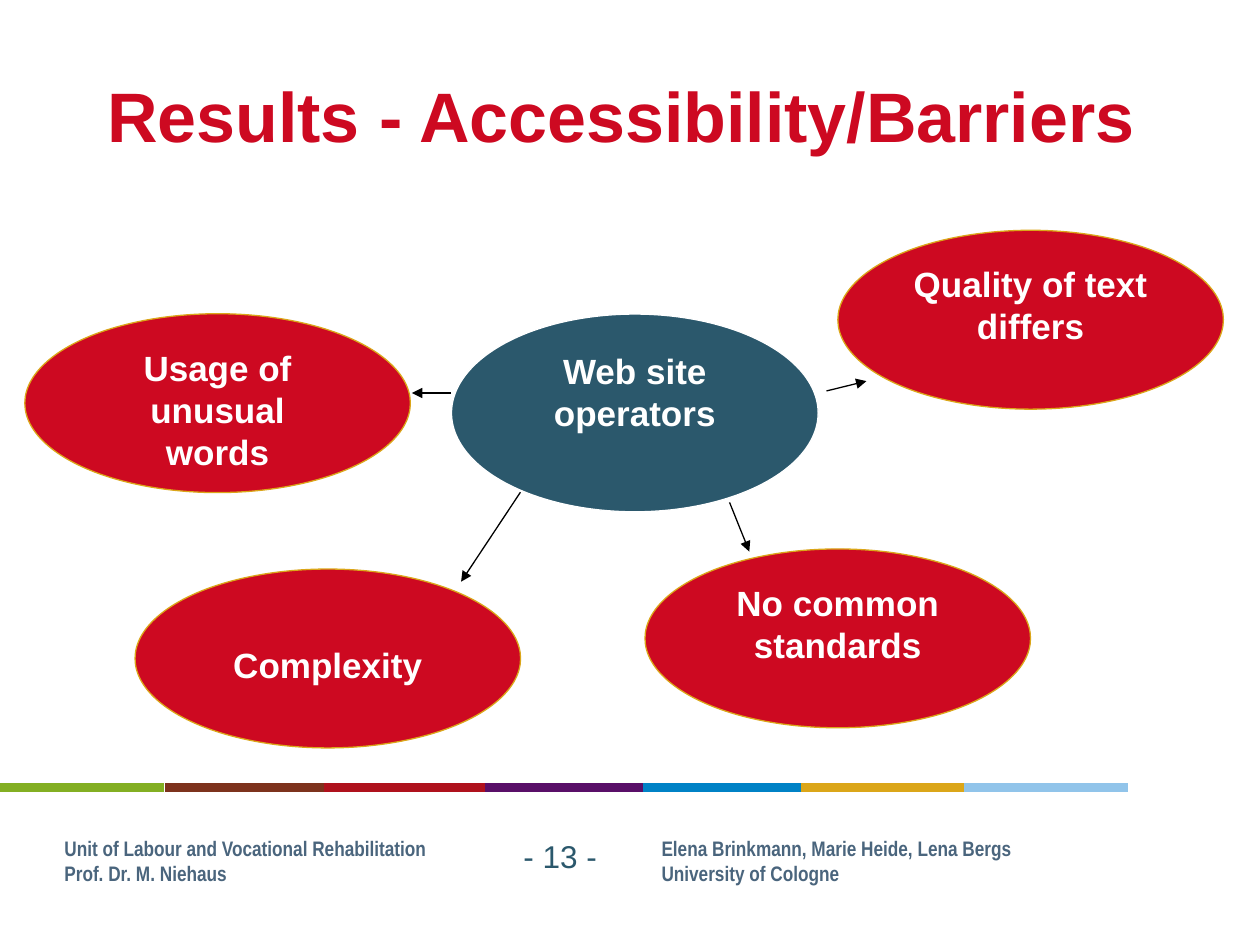
"""Build the slide on accessibility barriers seen by web site operators."""
import pptx
import pptx.dml.color
import pptx.enum.shapes
import pptx.enum.text
import pptx.oxml
import pptx.oxml.ns
import pptx.util

Pt = pptx.util.Pt
RGB = pptx.dml.color.RGBColor.from_string
ALIGN = pptx.enum.text.PP_ALIGN
ANCHOR = pptx.enum.text.MSO_ANCHOR
SHAPE = pptx.enum.shapes.MSO_SHAPE
CONNECTOR = pptx.enum.shapes.MSO_CONNECTOR

TITLE = "Results - Accessibility/Barriers"
HUB = ("Web site operators", 258, 179.5)
BARRIERS = [
    ("Usage of unusual words", 14.2, 179.3, 3.6),
    ("Quality of text differs", 478.8, 131.6, 3.6),
    ("No common standards", 368.6, 313.7, 3.6),
    ("Complexity", 77.2, 325.2, 27.6),
]
ARROWS = [
    (257.8, 224.6, 235.4, 224.6),
    (297.4, 281.3, 263.5, 332.4),
    (416.9, 287.1, 428.2, 315.2),
    (472.3, 223.4, 495.1, 217.8),
]
FOOTERS = [
    (36.8, ["Unit of Labour and Vocational Rehabilitation", "Prof. Dr. M. Niehaus"]),
    (378, ["Elena Brinkmann, Marie Heide, Lena Bergs", "University of Cologne"]),
]
PAGE = "- 13 -"
BARS = [
    (0, "83AF23"), (94.2, "7D321D"), (185.2, "AF111D"), (277.2, "590F68"),
    (367.2, "0082C6"), (458, "DBA619"), (550.8, "91C4EA"),
]
BAR_LENGTH, BAR_Y = 93.6, 450
HUB_SIZE, BARRIER_SIZE = (209.5, 113), (220.3, 102.2)

THEME = {
    "red": "CD0921", "teal": "2B586C", "gold": "DBA619", "white": "FFFFFF", "black": "000000",
    "line": 0.75, "bar": 5.5,
    "title": {"name": "Arial", "size": Pt(40), "bold": True, "color": "CD0921"},
    "bubble": {"name": "Arial", "size": Pt(20), "bold": True, "color": "FFFFFF"},
    "footer": {"name": "Arial Narrow", "size": Pt(12), "bold": True, "color": "4A657D"},
    "page": {"name": "Arial", "size": Pt(18), "bold": False, "color": "2B586C"},
}


def write(sp, lines, style, align=ALIGN.LEFT, **frame):
    """Fill a shape with formatted paragraphs."""
    tf = sp.text_frame
    for key, value in frame.items():
        setattr(tf, key, value)
    for i, line in enumerate(lines):
        p = tf.paragraphs[0] if i == 0 else tf.add_paragraph()
        p.alignment = align
        r = p.add_run()
        r.text = line
        for key, value in THEME[style].items():
            if key == "color":
                r.font.color.rgb = RGB(value)
            else:
                setattr(r.font, key, value)


def add_line(s, ends, colour, width, arrow=False):
    """Draw a straight line, with an arrowhead at its end if asked."""
    sp = s.shapes.add_connector(CONNECTOR.STRAIGHT, *map(Pt, ends))
    sp.line.color.rgb = RGB(colour)
    sp.line.width = Pt(width)
    if arrow:
        ln = sp.line._get_or_add_ln()
        ln.append(pptx.oxml.parse_xml(f'<a:tailEnd {pptx.oxml.ns.nsdecls("a")} type="triangle"/>'))
    sp._element.spPr.append(pptx.oxml.parse_xml(f'<a:effectLst {pptx.oxml.ns.nsdecls("a")}/>'))


def add_filled(s, kind, box, fill, line=None):
    """Draw a filled preset shape, outlined if a line colour is given."""
    sp = s.shapes.add_shape(kind, *map(Pt, box))
    sp.shadow.inherit = False
    sp.fill.solid()
    sp.fill.fore_color.rgb = RGB(fill)
    if line:
        sp.line.color.rgb = RGB(line)
        sp.line.width = Pt(THEME["line"])
    else:
        sp.line.fill.background()
    return sp


def add_bubble(s, text, left, top, size, fill, line, inset=3.6):
    """Draw an ellipse with its label."""
    sp = add_filled(s, SHAPE.OVAL, (left, top, *size), fill, line)
    write(sp, [text], "bubble", ALIGN.CENTER, word_wrap=True, vertical_anchor=ANCHOR.TOP,
          margin_top=Pt(inset), margin_left=Pt(9), margin_right=Pt(9))


def main():
    """Assemble and save the slide."""
    prs = pptx.Presentation()
    prs.slide_width, prs.slide_height = Pt(720), Pt(540)
    s = prs.slides.add_slide(prs.slide_layouts[5])

    title = s.shapes.title
    title.left, title.top, title.width, title.height = map(Pt, (54, 20.5, 612, 90))
    write(title, [TITLE], "title", vertical_anchor=ANCHOR.MIDDLE, word_wrap=True)

    for x, colour in BARS:
        add_line(s, (x, BAR_Y, x + BAR_LENGTH, BAR_Y), colour, THEME["bar"])
    for left, lines in FOOTERS:
        sp = add_filled(s, SHAPE.RECTANGLE, (left, 473.8, 113.8, 36), THEME["white"])
        write(sp, lines, "footer", word_wrap=False, margin_left=0, vertical_anchor=ANCHOR.TOP)
    sp = s.shapes.add_textbox(*map(Pt, (292, 474.5, 79.2, 28.8)))
    write(sp, [PAGE], "page", word_wrap=True)

    add_bubble(s, *HUB, HUB_SIZE, THEME["teal"], THEME["white"])
    for text, left, top, inset in BARRIERS:
        add_bubble(s, text, left, top, BARRIER_SIZE, THEME["red"], THEME["gold"], inset)
    for ends in ARROWS:
        add_line(s, ends, THEME["black"], THEME["line"], arrow=True)

    prs.save("out.pptx")


if __name__ == "__main__":
    main()
